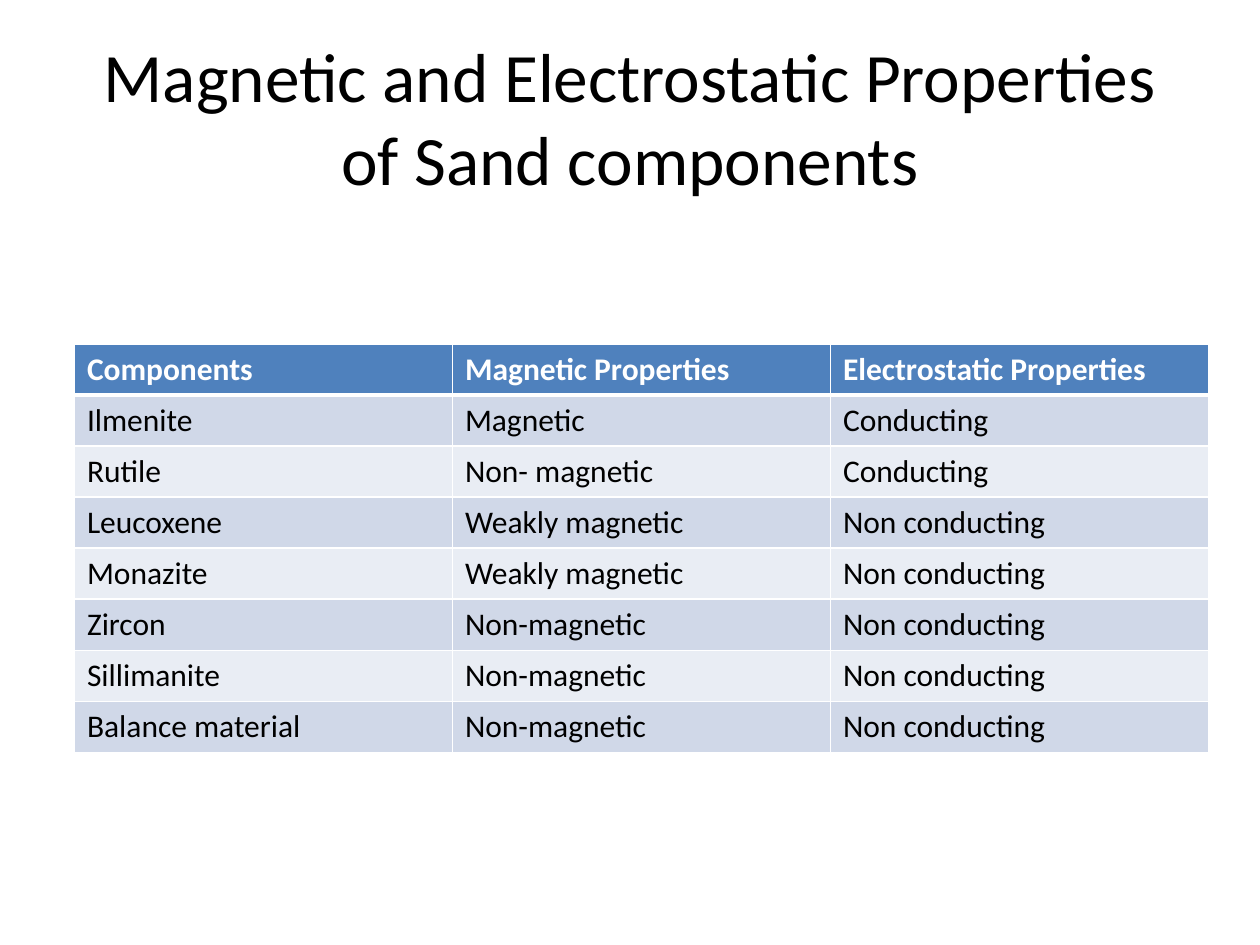
from dataclasses import dataclass

from lxml import etree
from pptx import Presentation
from pptx import util as u
from pptx.dml import color
from pptx.enum import text
from pptx.oxml import ns


@dataclass
class Theme:
    font: str = "Calibri"
    ink: str = "000000"
    white: str = "FFFFFF"
    head: str = "4F81BD"
    bands: tuple = ("E9EDF4", "D0D8E8")
    title: float = 39.6
    body: float = 18


theme = Theme()


def write(par, words, size, tint, bold=False):
    run = par.add_run()
    run.text = words
    font = run.font
    font.name, font.size, font.bold = theme.font, u.Pt(size), bold
    font.color.rgb = color.RGBColor.from_string(tint)


def edge(cell, side, width):
    line = etree.SubElement(cell._tc.get_or_add_tcPr(), ns.qn(f"a:ln{side}"),
                            w=str(u.Pt(width)))
    fill = etree.SubElement(line, ns.qn("a:solidFill"))
    etree.SubElement(fill, ns.qn("a:srgbClr"), val=theme.white)


deck = Presentation()
deck.slide_width, deck.slide_height = u.Cm(25.4), u.Cm(19.05)
slide = deck.slides.add_slide(deck.slide_layouts[6])

# Title
box = slide.shapes.add_textbox(u.Cm(1.27), u.Cm(0.76), u.Cm(22.86), u.Cm(3.18))
frame = box.text_frame
frame.word_wrap = True
frame.vertical_anchor = text.MSO_ANCHOR.MIDDLE
par = frame.paragraphs[0]
par.alignment = text.PP_ALIGN.CENTER
write(par, "Magnetic and Electrostatic Properties of Sand components",
      theme.title, theme.ink)

# Table of sand components
rows = [
    ("Components", "Magnetic Properties", "Electrostatic Properties"),
    ("Ilmenite", "Magnetic", "Conducting"),
    ("Rutile", "Non- magnetic", "Conducting"),
    ("Leucoxene", "Weakly magnetic", "Non conducting"),
    ("Monazite", "Weakly magnetic", "Non conducting"),
    ("Zircon", "Non-magnetic", "Non conducting"),
    ("Sillimanite", "Non-magnetic", "Non conducting"),
    ("Balance material", "Non-magnetic", "Non conducting"),
]
high = u.Cm(1.03)
grid = slide.shapes.add_table(len(rows), 3, u.Cm(1.5), u.Cm(6.93),
                              u.Cm(22.86), high * len(rows)).table

for r, row in enumerate(rows):
    grid.rows[r].height = high
    top = r == 0
    for c, words in enumerate(row):
        cell = grid.cell(r, c)
        # Borders come before the fill in the cell properties
        for side in "LRTB":
            thick = (top and side == "B") or (r == 1 and side == "T")
            edge(cell, side, 3 if thick else 1)
        cell.fill.solid()
        shade = theme.head if top else theme.bands[r % 2]
        cell.fill.fore_color.rgb = color.RGBColor.from_string(shade)
        write(cell.text_frame.paragraphs[0], words, theme.body,
              theme.white if top else theme.ink, top)

deck.save("out.pptx")
